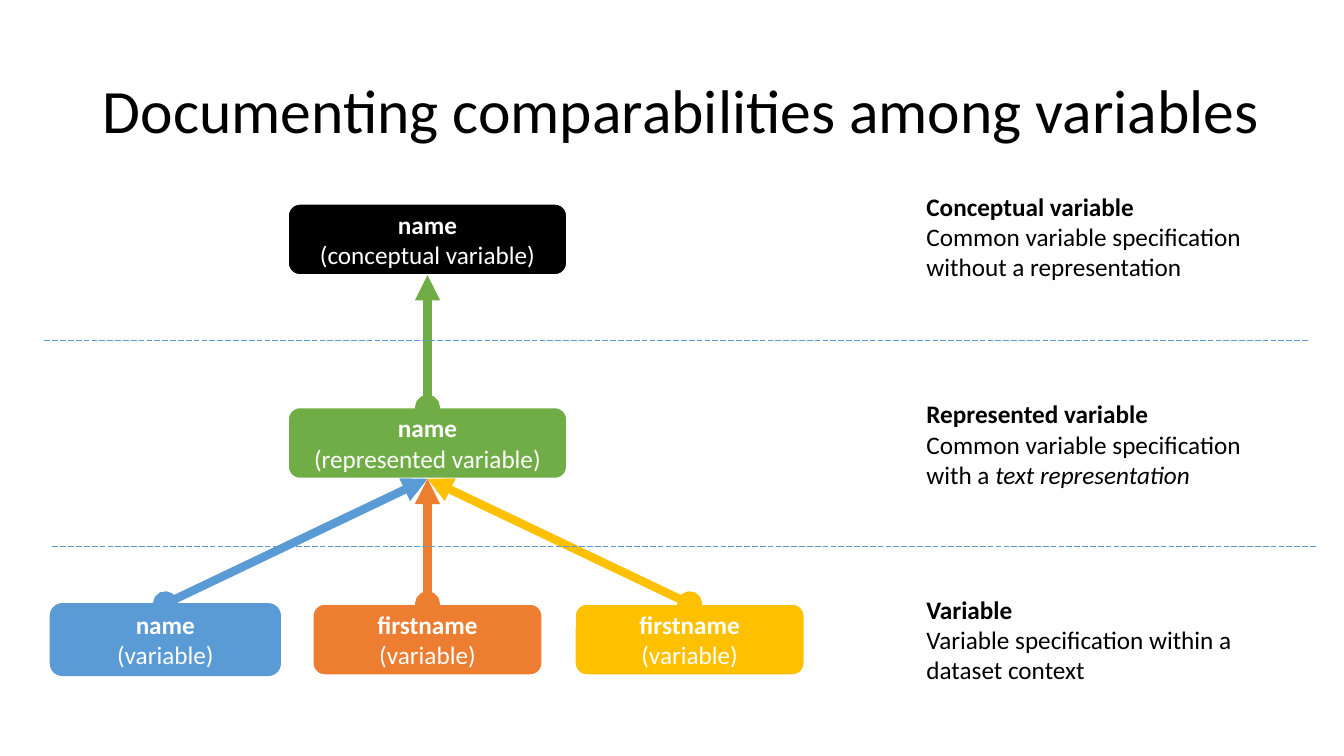
from dataclasses import dataclass

from lxml import etree
from pptx import Presentation
from pptx.dml.color import RGBColor
from pptx.enum.dml import MSO_LINE
from pptx.enum.shapes import MSO_CONNECTOR, MSO_SHAPE
from pptx.enum.text import MSO_ANCHOR, PP_ALIGN
from pptx.oxml.ns import qn
from pptx.util import Inches, Pt

ROUND = MSO_SHAPE.ROUNDED_RECTANGLE
STRAIGHT = MSO_CONNECTOR.STRAIGHT
DASH = MSO_LINE.LONG_DASH
MIDDLE = MSO_ANCHOR.MIDDLE
LEFT, CENTER = PP_ALIGN.LEFT, PP_ALIGN.CENTER
TOP, BOTTOM = 0, 2


@dataclass(frozen=True)
class Theme:
    font: str = "Calibri"
    title: int = 44
    body: int = 18
    black: str = "000000"
    white: str = "FFFFFF"
    blue: str = "5B9BD5"
    orange: str = "ED7D31"
    green: str = "70AD47"
    gold: str = "FFC000"


THEME = Theme()


def rgb(color):
    return RGBColor.from_string(color)


def style(para, size, color, align=LEFT, bold=False):
    para.alignment = align
    font = para.font
    font.name, font.size, font.bold = THEME.font, Pt(size), bold
    font.color.rgb = rgb(color)


def add_title(slide, text):
    title = slide.shapes.title
    title.left, title.top = Inches(0.92), Inches(0.4)
    title.width, title.height = Inches(11.85), Inches(1.45)
    frame = title.text_frame
    frame.text = text
    frame.vertical_anchor = MIDDLE
    para = frame.paragraphs[0]
    para.line_spacing = 0.9
    style(para, THEME.title, THEME.black)


def fill_text(frame, head, color, align):
    frame.word_wrap = True
    frame.vertical_anchor = MIDDLE
    first = frame.paragraphs[0]
    first.text = head
    style(first, THEME.body, color, align, True)
    second = frame.add_paragraph()
    style(second, THEME.body, color, align)
    return second


def add_box(slide, mid, top, width, name, kind, color, edge=THEME.white, weight=1.5):
    box = slide.shapes.add_shape(
        ROUND, Inches(mid - width / 2), Inches(top), Inches(width), Inches(0.71))
    box.shadow.inherit = False
    box.fill.solid()
    box.fill.fore_color.rgb = rgb(color)
    box.line.color.rgb = rgb(edge)
    box.line.width = Pt(weight)
    para = fill_text(box.text_frame, name, THEME.white, CENTER)
    para.text = f"({kind})"
    return box


def add_line(slide, start, end, color, weight):
    points = [Inches(n) for n in (*start, *end)]
    line = slide.shapes.add_connector(STRAIGHT, *points)
    line.line.color.rgb = rgb(color)
    line.line.width = Pt(weight)
    etree.SubElement(line._element.spPr, qn("a:effectLst"))
    return line


def add_arrow(slide, source, target, color):
    arrow = add_line(slide, (0, 0), (1, 1), color, 6)
    arrow.begin_connect(source, TOP)
    arrow.end_connect(target, BOTTOM)
    stroke = arrow.line._get_or_add_ln()
    for tag, kind in (("a:headEnd", "oval"), ("a:tailEnd", "triangle")):
        etree.SubElement(stroke, qn(tag), type=kind)


def add_rule(slide, left, top):
    rule = add_line(slide, (left + 12.54, top), (left, top), THEME.blue, 0.5)
    rule.line.dash_style = DASH


def add_note(slide, top, head, text, stress=""):
    note = slide.shapes.add_textbox(
        Inches(9.09), Inches(top), Inches(3.46), Inches(1.21))
    para = fill_text(note.text_frame, head, THEME.black, LEFT)
    para.add_run().text = text
    if stress:
        run = para.add_run()
        run.text = stress
        run.font.italic = True


def main():
    deck = Presentation()
    deck.slide_width, deck.slide_height = Inches(13.33), Inches(7.5)
    slide = deck.slides.add_slide(deck.slide_layouts[5])
    add_title(slide, "Documenting comparabilities among variables")

    mid = 4.24
    concept = add_box(slide, mid, 2.02, 2.77, "name", "conceptual variable", THEME.black)
    common = add_box(slide, mid, 4.04, 2.77, "name", "represented variable", THEME.green)

    fields = (
        (-1, "name", THEME.blue, THEME.blue, 1),
        (0, "firstname", THEME.orange, THEME.white, 1.5),
        (1, "firstname", THEME.gold, THEME.white, 1.5),
    )
    for step, name, color, edge, weight in fields:
        field = add_box(slide, mid + step * 2.6, 5.99, 2.28, name, "variable",
                        color, edge, weight)
        add_arrow(slide, field, common, color)
    add_arrow(slide, common, concept, THEME.green)

    add_rule(slide, 0.43, 3.38)
    add_rule(slide, 0.51, 5.42)

    add_note(slide, 1.74, "Conceptual variable",
             "Common variable specification without a representation")
    add_note(slide, 3.8, "Represented variable",
             "Common variable specification with a ", "text representation")
    add_note(slide, 5.74, "Variable",
             "Variable specification within a dataset context")
    deck.save("out.pptx")


if __name__ == "__main__":
    main()
